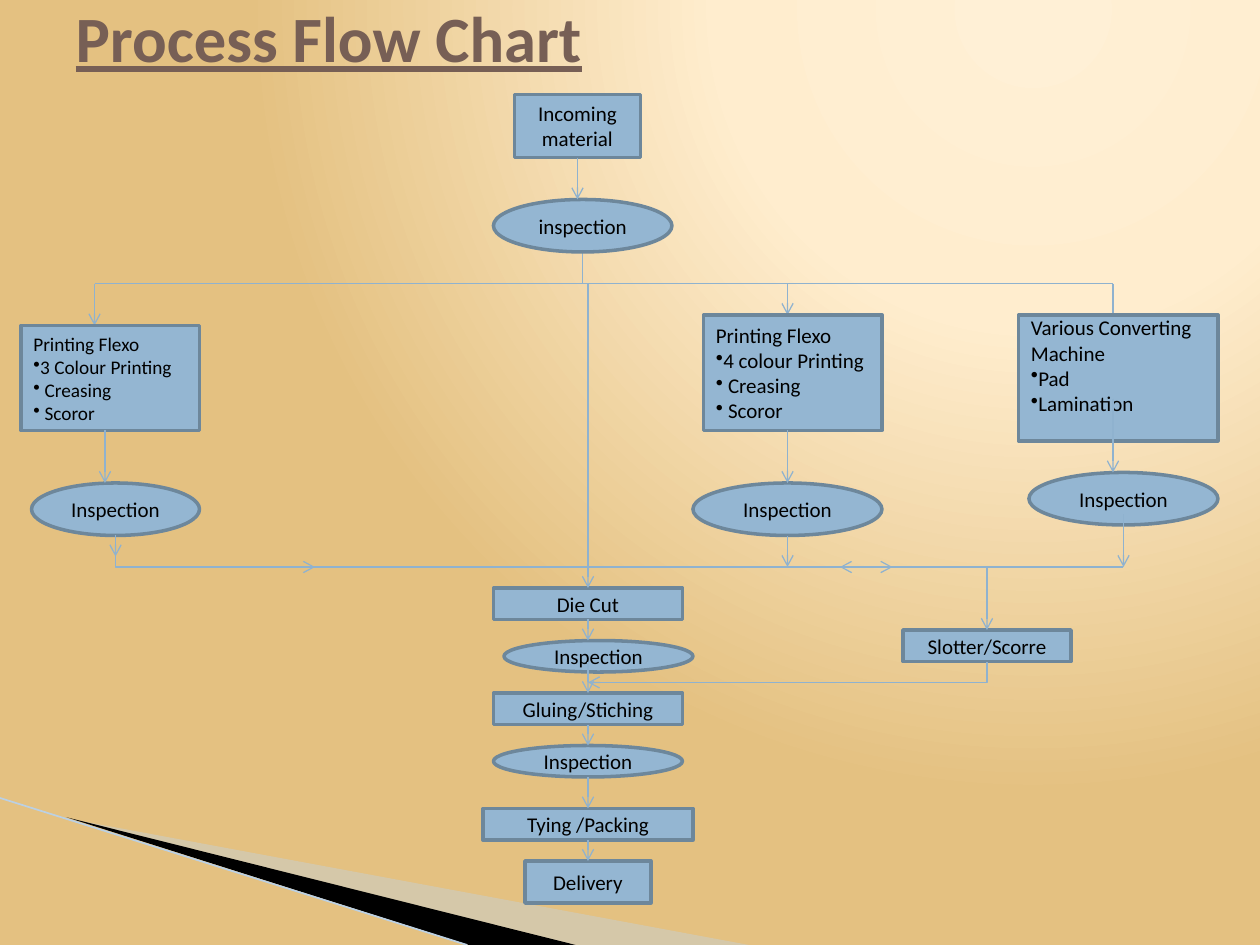
from lxml import etree
from pptx import Presentation
from pptx.dml import color
from pptx.enum import shapes, text
from pptx.oxml import ns
from pptx.util import Pt

RECT, OVAL = shapes.MSO_SHAPE.RECTANGLE, shapes.MSO_SHAPE.OVAL
FLEXO = ["Creasing", "Scoror"]
BRANCHES = [
    (54, 162, 54, 186),
    (636, 162, 636, 186),
    (450, 162, 450, 180),
]
STEPS = [
    (RECT, 294, 54, 72, 36, "Incoming material"),
    (OVAL, 282, 114, 102, 30, "inspection"),
    (OVAL, 18, 276, 96, 30, "Inspection"),
    (OVAL, 396, 276, 108, 30, "Inspection"),
    (OVAL, 588, 270, 108, 30, "Inspection"),
    (RECT, 282, 336, 108, 18, "Die Cut"),
    (OVAL, 288, 366, 108, 18, "Inspection"),
    (RECT, 282, 396, 108, 18, "Gluing/Stiching"),
    (OVAL, 282, 426, 108, 18, "Inspection"),
    (RECT, 276, 462, 120, 18, "Tying /Packing"),
    (RECT, 300, 492, 72, 24, "Delivery"),
    (RECT, 516, 360, 96, 18, "Slotter/Scorre"),
]
DOWN_ARROWS = [
    (330, 90, 114),
    (60, 246, 276),
    (450, 246, 276),
    (636, 228, 270),
    (66, 312, 318),
    (450, 306, 324),
    (642, 294, 324),
    (564, 324, 360),
    (336, 162, 336),
    (336, 354, 366),
    (336, 378, 396),
    (336, 414, 426),
    (336, 444, 462),
    (336, 480, 492),
]
FLOW_MARKS = [(156, 180), (486, 480), (498, 510)]


def rgb(value):
    """Return the colour for a hex string."""
    return color.RGBColor.from_string(value)


def add(parent, tag, **attrs):
    """Append a DrawingML element to a parent and return it."""
    return etree.SubElement(parent, ns.qn("a:" + tag), attrs)


class FlowSlide:
    """Hold the flow chart style and the slide being drawn."""

    fill, edge, wire = "94B6D2", "6D879B", "8FB2CF"
    ink, face = "000000", "Calibri"

    def __init__(self, prs):
        """Add a title-only slide."""
        self.s = prs.slides.add_slide(prs.slide_layouts[5])

    def background(self, stops):
        """Fill the background with a circular gradient."""
        fill = self.s.background.fill
        fill.gradient()
        grad = self.s.element.find(".//" + ns.qn("a:gradFill"))
        for child in list(grad):
            grad.remove(child)
        gs = add(grad, "gsLst")
        for pos, value in stops:
            add(add(gs, "gs", pos=str(pos * 1000)), "srgbClr", val=value)
        path = add(grad, "path", path="circle")
        add(path, "fillToRect", l="65000", t="0", r="0", b="98000")

    def run(self, p, words, size, value=None):
        """Add one run of text and return its font."""
        r = p.add_run()
        r.text = words
        r.font.name, r.font.size = self.face, Pt(size)
        r.font.color.rgb = rgb(value or self.ink)
        return r.font

    def title(self, words):
        """Place and format the title."""
        sp = self.s.shapes.title
        sp.left, sp.top, sp.width, sp.height = Pt(36), Pt(0), Pt(648), Pt(42)
        tf = sp.text_frame
        tf.auto_size = text.MSO_AUTO_SIZE.NONE
        tf.vertical_anchor = text.MSO_ANCHOR.MIDDLE
        p = tf.paragraphs[0]
        p.alignment = text.PP_ALIGN.LEFT
        font = self.run(p, words, 36.9, "775F55")
        font.bold = font.underline = True

    def wedge(self, points, value, alpha=None):
        """Draw a filled polygon without an outline."""
        start, *rest = [(Pt(x), Pt(y)) for x, y in points]
        fb = self.s.shapes.build_freeform(*start)
        fb.add_line_segments(rest)
        sp = fb.convert_to_shape()
        sp.shadow.inherit = False
        sp.fill.solid()
        sp.fill.fore_color.rgb = rgb(value)
        sp.line.fill.background()
        if alpha:
            clr = sp._element.spPr.find(".//" + ns.qn("a:srgbClr"))
            add(clr, "alpha", val=str(alpha * 1000))

    def node(self, kind, x, y, w, h, head, items=(), size=12):
        """Draw a step, listing its items as bullets."""
        sp = self.s.shapes.add_shape(kind, Pt(x), Pt(y), Pt(w), Pt(h))
        sp.shadow.inherit = False
        sp.fill.solid()
        sp.fill.fore_color.rgb = rgb(self.fill)
        sp.line.color.rgb = rgb(self.edge)
        sp.line.width = Pt(2)
        tf = sp.text_frame
        tf.word_wrap = True
        tf.vertical_anchor = text.MSO_ANCHOR.MIDDLE
        p = tf.paragraphs[0]
        p.alignment = text.PP_ALIGN.LEFT if items else text.PP_ALIGN.CENTER
        self.run(p, head, size)
        for item in items:
            p = tf.add_paragraph()
            p.alignment = text.PP_ALIGN.LEFT
            add(p._p.get_or_add_pPr(), "buChar", char="•")
            self.run(p, item, size)
        return tf

    def link(self, x1, y1, x2, y2, end="tailEnd", elbow=False, value=None, width=0.75):
        """Draw a connector with an optional arrowhead and right-angle bend."""
        kinds = shapes.MSO_CONNECTOR
        kind = kinds.ELBOW if elbow else kinds.STRAIGHT
        c = self.s.shapes.add_connector(kind, Pt(x1), Pt(y1), Pt(x2), Pt(y2))
        c.line.color.rgb = rgb(value or self.wire)
        c.line.width = Pt(width)
        pr = c._element.spPr
        if elbow:
            pr.find(ns.qn("a:prstGeom")).set("prst", "bentConnector2")
        if end:
            add(pr.find(ns.qn("a:ln")), end, type="arrow")
        add(pr, "effectLst")


def main():
    """Build the process flow chart."""
    prs = Presentation()
    prs.slide_width, prs.slide_height = Pt(720), Pt(540)
    s = FlowSlide(prs)
    s.background([(0, "FFF0D6"), (40, "FFEDCE"), (100, "E4C181")])
    s.wedge([(40, 468), (428, 540), (328, 540)], "C0D3E6", 40)
    s.wedge([(38, 467), (329, 540), (268, 540)], "000000")
    s.link(0, 456, 267, 540, end=None, value="BBD0E3", width=0.95)
    s.title("Process Flow Chart")

    for x in (54, 636):
        s.link(x, 162, 333, 144, end=None, elbow=True)
    for branch in BRANCHES:
        s.link(*branch)
    for step in STEPS:
        s.node(*step)
    flexo = [" " + job for job in FLEXO]
    s.node(RECT, 12, 186, 102, 60, "Printing Flexo", ["3 Colour Printing"] + flexo, 11)
    s.node(RECT, 402, 180, 102, 66, "Printing Flexo", ["4 colour Printing"] + flexo)
    tf = s.node(RECT, 582, 180, 114, 72, "Various Converting Machine", ["Pad", "Lamination"])
    tf.vertical_anchor, tf.margin_top = text.MSO_ANCHOR.TOP, Pt(0)

    s.link(642, 324, 66, 306, end=None, elbow=True)
    for x, top, bottom in DOWN_ARROWS:
        s.link(x, top, x, bottom)
    for x1, x2 in FLOW_MARKS:
        s.link(x1, 324, x2, 324)
    s.link(336, 390, 564, 378, end="headEnd", elbow=True)
    prs.save("out.pptx")


if __name__ == "__main__":
    main()
